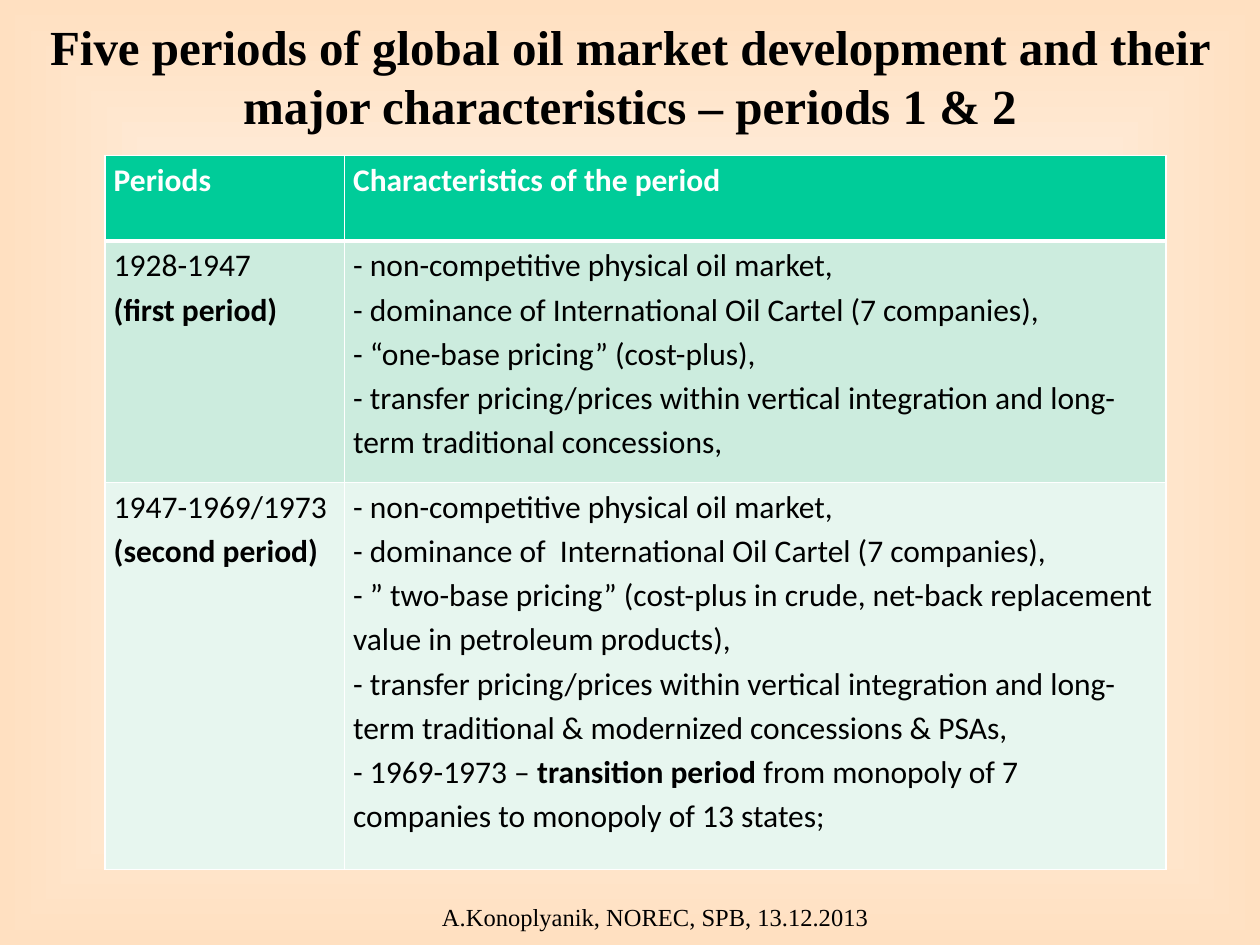
from lxml import etree
from pptx import Presentation
from pptx.dml.color import RGBColor
from pptx.enum import text
from pptx.oxml import parse_xml
from pptx.oxml.ns import nsdecls, qn
from pptx.util import Pt

COLORS = {"ink": "000000", "white": "FFFFFF", "edge": "FFE0C1",
          "header": "00CC99", "first": "CCECDE", "second": "E7F6EF"}


def style(font, name, size, color, bold=None):
    font.name, font.size, font.bold = name, Pt(size), bold
    font.color.rgb = RGBColor.from_string(COLORS[color])


def add_border(cell, side, position, width):
    line = etree.Element(qn(f"a:ln{side}"), w=str(Pt(width)))
    fill = etree.SubElement(line, qn("a:solidFill"))
    etree.SubElement(fill, qn("a:srgbClr"), val=COLORS["white"])
    cell._tc.get_or_add_tcPr().insert(position, line)


deck = Presentation()
deck.slide_width, deck.slide_height = Pt(720), Pt(540)
slide = deck.slides.add_slide(deck.slide_layouts[5])

# Background: gradient from the centre to the edges
background = parse_xml(
    f'<p:bg {nsdecls("p", "a")}><p:bgPr><a:gradFill rotWithShape="1"><a:gsLst>'
    f'<a:gs pos="0"><a:srgbClr val="{COLORS["white"]}"/></a:gs>'
    f'<a:gs pos="100000"><a:srgbClr val="{COLORS["edge"]}"/></a:gs></a:gsLst>'
    '<a:path path="shape"><a:fillToRect l="50000" t="50000" r="50000" b="50000"/></a:path>'
    '</a:gradFill><a:effectLst/></p:bgPr></p:bg>')
slide.element.cSld.insert(0, background)

# Title
title = slide.shapes.title
title.left, title.top, title.width, title.height = Pt(0), Pt(-2), Pt(720), Pt(90)
title.text_frame.text = ("Five periods of global oil market development and their "
                         "major characteristics – periods 1 & 2")
title.text_frame.auto_size = text.MSO_AUTO_SIZE.NONE
title.text_frame.vertical_anchor = text.MSO_ANCHOR.MIDDLE
heading = title.text_frame.paragraphs[0]
heading.alignment = text.PP_ALIGN.CENTER
style(heading.font, "Times New Roman", 28, "ink", True)

# Table: each cell is a list of (text, bold) runs, with \n as a line break
rows = [
    ("header", "white", 49, [
        [("Periods", True)],
        [("Characteristics of the period", True)]]),
    ("first", "ink", 138, [
        [("1928-1947\n", False), ("(first period)", True)],
        [("- non-competitive physical oil market,\n"
          "- dominance of International Oil Cartel (7 companies),\n"
          "- “one-base pricing” (cost-plus),\n"
          "- transfer pricing/prices within vertical integration and "
          "long-term traditional concessions,", False)]]),
    ("second", "ink", 221, [
        [("1947-1969/1973 ", False), ("(second period)", True)],
        [("- non-competitive physical oil market,\n"
          "- dominance of  International Oil Cartel (7 companies),\n"
          "- ” two-base pricing” (cost-plus in crude, net-back replacement "
          "value in petroleum products),\n"
          "- transfer pricing/prices within vertical integration and "
          "long-term traditional & modernized concessions & PSAs,\n"
          "- 1969-1973 – ", False),
         ("transition period ", True),
         ("from monopoly of 7 companies to monopoly of 13 states;", False)]]),
]
periods = slide.shapes.add_table(3, 2, Pt(60), Pt(88.8), Pt(606.2), Pt(408)).table
for column, width in zip(periods.columns, (136.8, 469.4)):
    column.width = Pt(width)

for r, (fill, ink, height, contents) in enumerate(rows):
    periods.rows[r].height = Pt(height)
    for c, runs in enumerate(contents):
        cell = periods.cell(r, c)
        cell.margin_left = cell.margin_right = Pt(5)
        cell.margin_top = cell.margin_bottom = 0
        cell.fill.solid()
        cell.fill.fore_color.rgb = RGBColor.from_string(COLORS[fill])
        for position, side in enumerate("LRTB"):
            below_header = (r, side) in ((0, "B"), (1, "T"))
            add_border(cell, side, position, 3 if below_header else 1)
        paragraph = cell.text_frame.paragraphs[0]
        paragraph.line_spacing = 1.15
        style(paragraph.font, "Calibri", 18, ink)
        for wording, bold in runs:
            for n, line in enumerate(wording.split("\n")):
                if n:
                    paragraph.add_line_break()
                if line:
                    run = paragraph.add_run()
                    run.text = line
                    style(run.font, "Calibri", 18, ink, bold)

# Footer
footer = slide.shapes.add_textbox(Pt(144.7), Pt(512), Pt(459.4), Pt(36)).text_frame
footer.word_wrap = True
footer.text = "A.Konoplyanik, NOREC, SPB, 13.12.2013"
footer.paragraphs[0].alignment = text.PP_ALIGN.CENTER
style(footer.paragraphs[0].font, "Times New Roman", 14, "ink")

deck.save("out.pptx")
